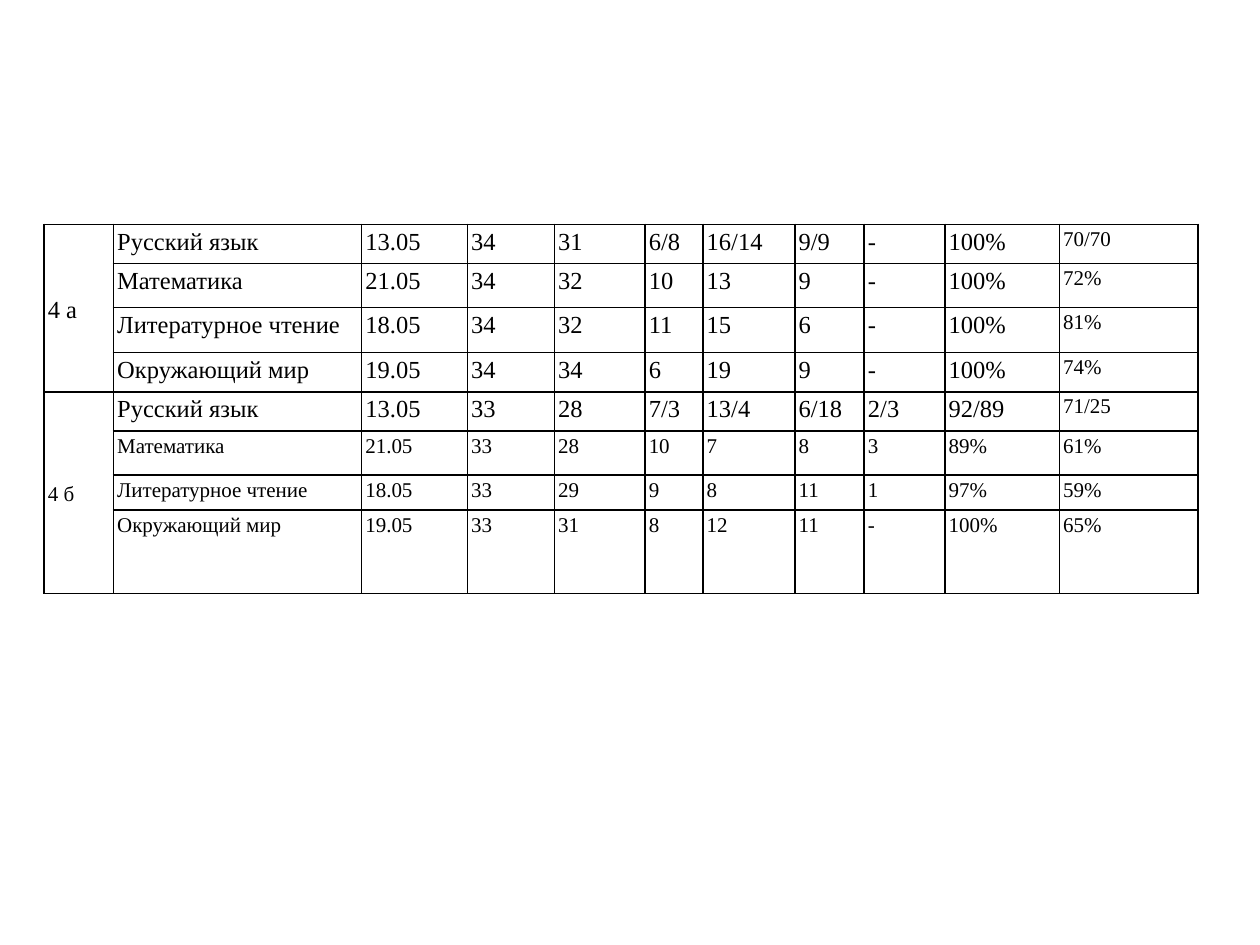
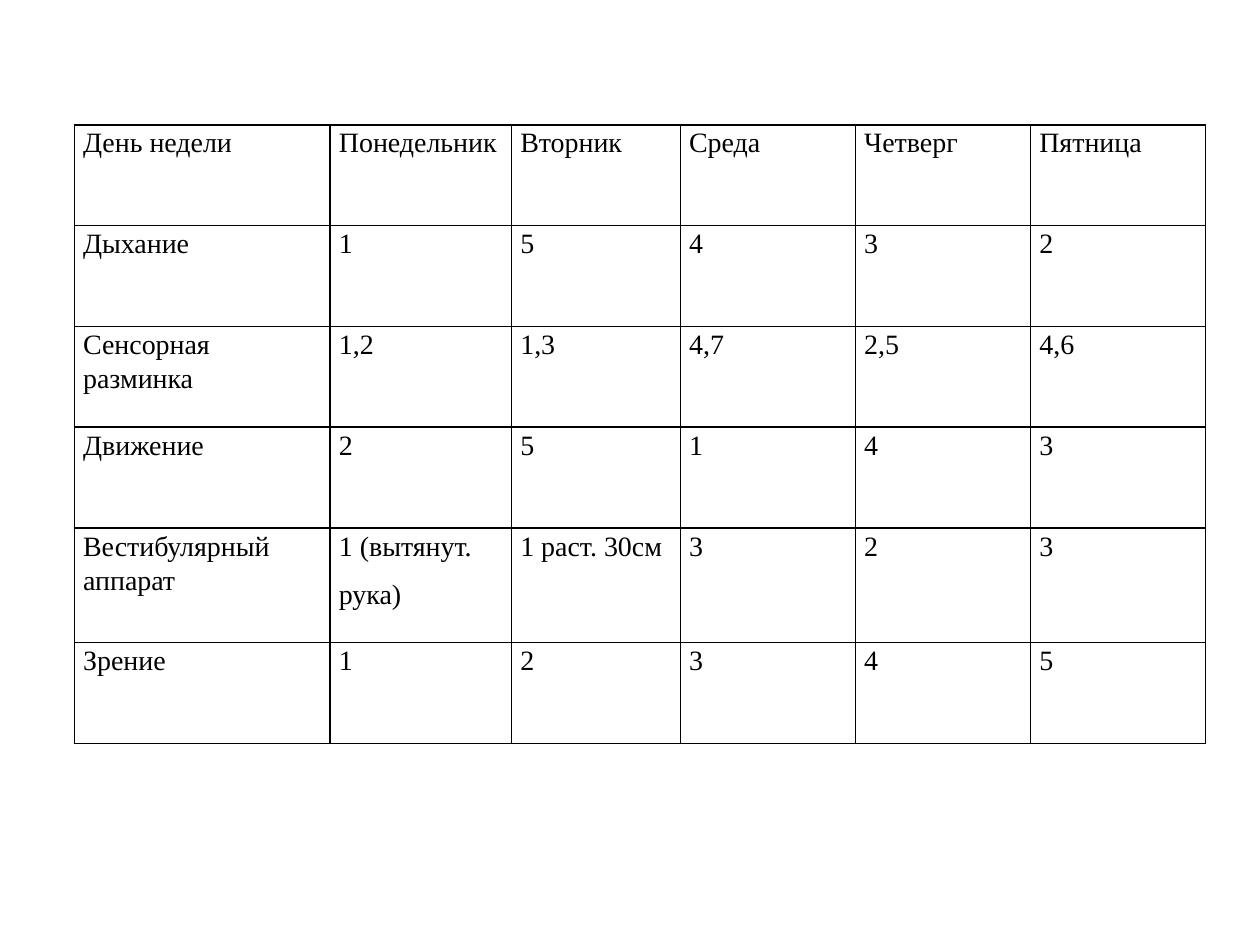
"""Build two slides of school tables: test results and a weekly exercise plan."""
from lxml.etree import SubElement as Sub
from pptx import Presentation
from pptx.dml.color import RGBColor as Rgb
from pptx.enum.text import MSO_ANCHOR as Anchor
from pptx.oxml.ns import qn
from pptx.util import Inches, Pt

WIDE, HIGH, GRID = 10, 7.5, 1000

TERMS = ["Русский язык", "Математика", "Литературное чтение", "Окружающий мир"]
DATES = ["13.05", "21.05", "18.05", "19.05"]
MARKS = {
    "4 а": [
        "34 31 6/8 16/14 9/9 - 100% 70/70",
        "34 32 10 13 9 - 100% 72%",
        "34 32 11 15 6 - 100% 81%",
        "34 34 6 19 9 - 100% 74%",
    ],
    "4 б": [
        "33 28 7/3 13/4 6/18 2/3 92/89 71/25",
        "33 28 10 7 8 3 89% 61%",
        "33 29 9 8 11 1 97% 59%",
        "33 31 8 12 11 - 100% 65%",
    ],
}
WEEK = [
    ["День недели", "Понедельник", "Вторник", "Среда", "Четверг", "Пятница"],
    ["Дыхание", "1", "5", "4", "3", "2"],
    ["Сенсорная разминка", "1,2", "1,3", "4,7", "2,5", "4,6"],
    ["Движение", "2", "5", "1", "4", "3"],
    ["Вестибулярный аппарат", "1 (вытянут.\nрука)", "1 раст. 30см", "3", "2", "3"],
    ["Зрение", "1", "2", "3", "4", "5"],
]


def tint(code):
    return Rgb.from_string(code)


class Deck:
    font, ink, line = "Times New Roman", "000000", 1

    def __init__(self):
        self.show = Presentation()
        self.show.slide_width, self.show.slide_height = Inches(WIDE), Inches(HIGH)
        self.unit = self.show.slide_width // GRID

    def page(self):
        self.slide = self.show.slides.add_slide(self.show.slide_layouts[6])

    def table(self, left, top, cols, rows, pad):
        spots = [n * self.unit for n in (left, top, sum(cols), sum(rows))]
        grid = self.slide.shapes.add_table(len(rows), len(cols), *spots).table
        grid.first_row = grid.horz_banding = False
        for col, span in zip(grid.columns, cols):
            col.width = span * self.unit
        for row, span in zip(grid.rows, rows):
            row.height = span * self.unit
        for cell in grid.iter_cells():
            cell.margin_left = cell.margin_right = pad * self.unit
            cell.margin_top = cell.margin_bottom = 0
            self.edge(cell)
            cell.fill.background()
        return grid

    def edge(self, cell):
        props = cell._tc.get_or_add_tcPr()
        for side in ("lnL", "lnR", "lnT", "lnB"):
            rule = Sub(props, qn(f"a:{side}"), w=str(Pt(self.line)))
            Sub(Sub(rule, qn("a:solidFill")), qn("a:srgbClr"), val=self.ink)

    def text(self, cell, words, size, lead, after=0):
        frame = cell.text_frame
        for k, part in enumerate(words.split("\n")):
            para = frame.add_paragraph() if k else frame.paragraphs[0]
            para.line_spacing, para.space_after = lead, Pt(after)
            run = para.add_run()
            run.text = part
            face = run.font
            face.name, face.size, face.bold = self.font, Pt(size), False
            face.color.rgb = tint(self.ink)


def tests(deck):
    deck.page()
    cols = [55, 197, 84, 69, 72, 46, 73, 55, 64, 91, 110]
    rows = [31, 35, 36, 31, 31, 35, 28, 66]
    grid = deck.table(35, 178, cols, rows, 3)
    step, large, small, lead = len(TERMS), 14, 12, 1.15
    for group, (name, lines) in enumerate(MARKS.items()):
        first = group * step
        head = grid.cell(first, 0)
        head.merge(grid.cell(first + step - 1, 0))
        head.vertical_anchor = Anchor.MIDDLE
        deck.text(head, name, small if group else large, lead)
        for k, (term, date, line) in enumerate(zip(TERMS, DATES, lines)):
            size = small if group and k else large
            for c, words in enumerate([term, date, *line.split()], 1):
                last = c == len(cols) - 1
                deck.text(grid.cell(first + k, c), words, small if last else size, lead)


def plan(deck):
    deck.page()
    cols = [203, 144, 134] + [139] * 3
    rows = [80] * 4 + [91, 80]
    grid = deck.table(59, 99, cols, rows, 7)
    for r, line in enumerate(WEEK):
        for c, words in enumerate(line):
            deck.text(grid.cell(r, c), words, 16, 1.1, 8)


def main():
    deck = Deck()
    tests(deck)
    plan(deck)
    deck.show.save("out.pptx")


if __name__ == "__main__":
    main()
